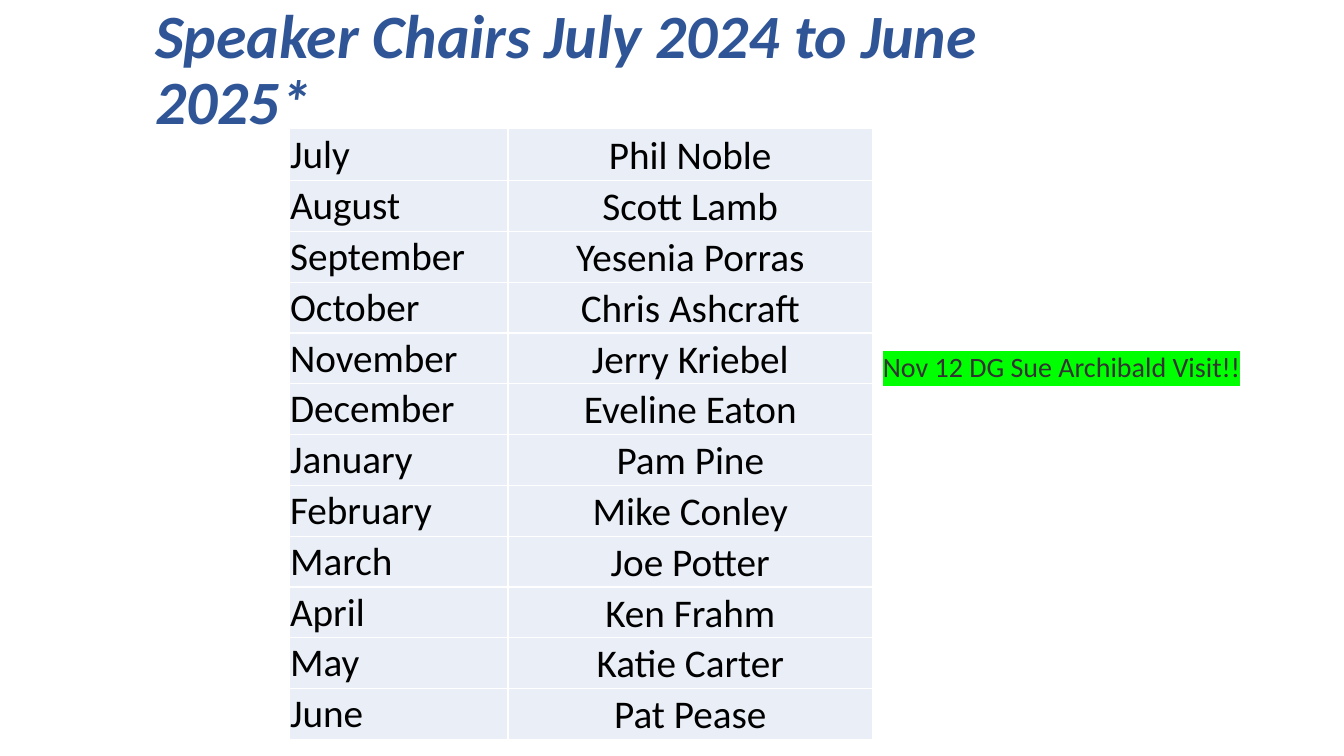
"""Build the slide listing the speaker chairs from July 2024 to June 2025."""
from dataclasses import dataclass

from lxml import etree
from pptx import Presentation
from pptx.dml.color import RGBColor
from pptx.enum.text import MSO_ANCHOR, MSO_AUTO_SIZE, PP_ALIGN
from pptx.oxml import parse_xml
from pptx.oxml.ns import nsdecls, qn
from pptx.util import Cm, Pt

LEFT, CENTER = PP_ALIGN.LEFT, PP_ALIGN.CENTER
MIDDLE, BOTTOM = MSO_ANCHOR.MIDDLE, MSO_ANCHOR.BOTTOM
NO_AUTOFIT = MSO_AUTO_SIZE.NONE


@dataclass(frozen=True)
class Theme:
    """Colours and type sizes of the slide."""
    font: str = "Calibri"
    heading: str = "2F5597"
    body: str = "000000"
    note: str = "333333"
    highlight: str = "00FF00"
    cell: str = "EAEFF7"
    border: str = "FFFFFF"
    heading_size: int = 44
    body_size: int = 28
    note_size: int = 20


THEME = Theme()

CHAIRS = [
    ("July", "Phil Noble"),
    ("August", "Scott Lamb"),
    ("September", "Yesenia Porras"),
    ("October", "Chris Ashcraft"),
    ("November", "Jerry Kriebel"),
    ("December", "Eveline Eaton"),
    ("January", "Pam Pine"),
    ("February", "Mike Conley"),
    ("March", "Joe Potter"),
    ("April", "Ken Frahm"),
    ("May", "Katie Carter"),
    ("June", "Pat Pease"),
]


def write(frame, text, size, color, align=LEFT, spacing=None):
    """Put one formatted paragraph in a text frame and return its run."""
    frame.text = text
    paragraph = frame.paragraphs[0]
    paragraph.alignment = align
    paragraph.line_spacing = spacing
    run = paragraph.runs[0]
    run.font.name = THEME.font
    run.font.size = Pt(size)
    run.font.color.rgb = RGBColor.from_string(color)
    return run


def add_borders(cell):
    """Draw a thin line on all four sides of a table cell."""
    properties = cell._tc.get_or_add_tcPr()
    for position, side in enumerate("LRTB"):
        properties.insert(position, parse_xml(
            f'<a:ln{side} {nsdecls("a")} w="12700"><a:solidFill>'
            f'<a:srgbClr val="{THEME.border}"/></a:solidFill></a:ln{side}>'))


presentation = Presentation()
presentation.slide_width = Cm(33.87)
presentation.slide_height = Cm(19.05)
slide = presentation.slides.add_slide(presentation.slide_layouts[5])

heading = slide.shapes.title
heading.left, heading.top = Cm(3.66), Cm(0.46)
heading.width, heading.height = Cm(24.66), Cm(2.69)
heading.text_frame.word_wrap = True
heading.text_frame.auto_size = NO_AUTOFIT
heading.text_frame.vertical_anchor = MIDDLE
heading_run = write(heading.text_frame, "Speaker Chairs July 2024 to June 2025*",
                    THEME.heading_size, THEME.heading, spacing=0.9)
heading_run.font.bold = True
heading_run.font.italic = True

schedule = slide.shapes.add_table(
    len(CHAIRS), 2, Cm(7.29), Cm(3.23), Cm(14.7), Cm(15.44)).table
schedule.first_row = False
schedule.horz_banding = False
schedule.columns[0].width = Cm(5.51)
schedule.columns[1].width = Cm(9.19)

for row_index, chair in enumerate(CHAIRS):
    schedule.rows[row_index].height = Cm(1.28 if row_index else 1.32)
    for column, (text, align, anchor) in enumerate(
            zip(chair, (LEFT, CENTER), (MIDDLE, BOTTOM))):
        cell = schedule.cell(row_index, column)
        cell.margin_left = cell.margin_right = cell.margin_top = Cm(0.02)
        cell.margin_bottom = 0
        cell.vertical_anchor = anchor
        cell.fill.solid()
        cell.fill.fore_color.rgb = RGBColor.from_string(THEME.cell)
        add_borders(cell)
        write(cell.text_frame, text, THEME.body_size, THEME.body, align)

visit = slide.shapes.add_textbox(Cm(22), Cm(8.38), Cm(9.58), Cm(1.83))
visit.text_frame.word_wrap = True
visit.text_frame.vertical_anchor = MIDDLE
visit_run = write(visit.text_frame, "Nov 12 DG Sue Archibald Visit!!",
                  THEME.note_size, THEME.note, spacing=0.9)
highlight = etree.Element(qn("a:highlight"))
etree.SubElement(highlight, qn("a:srgbClr"), val=THEME.highlight)
visit_run.font._element.find(qn("a:solidFill")).addnext(highlight)

presentation.save("out.pptx")
